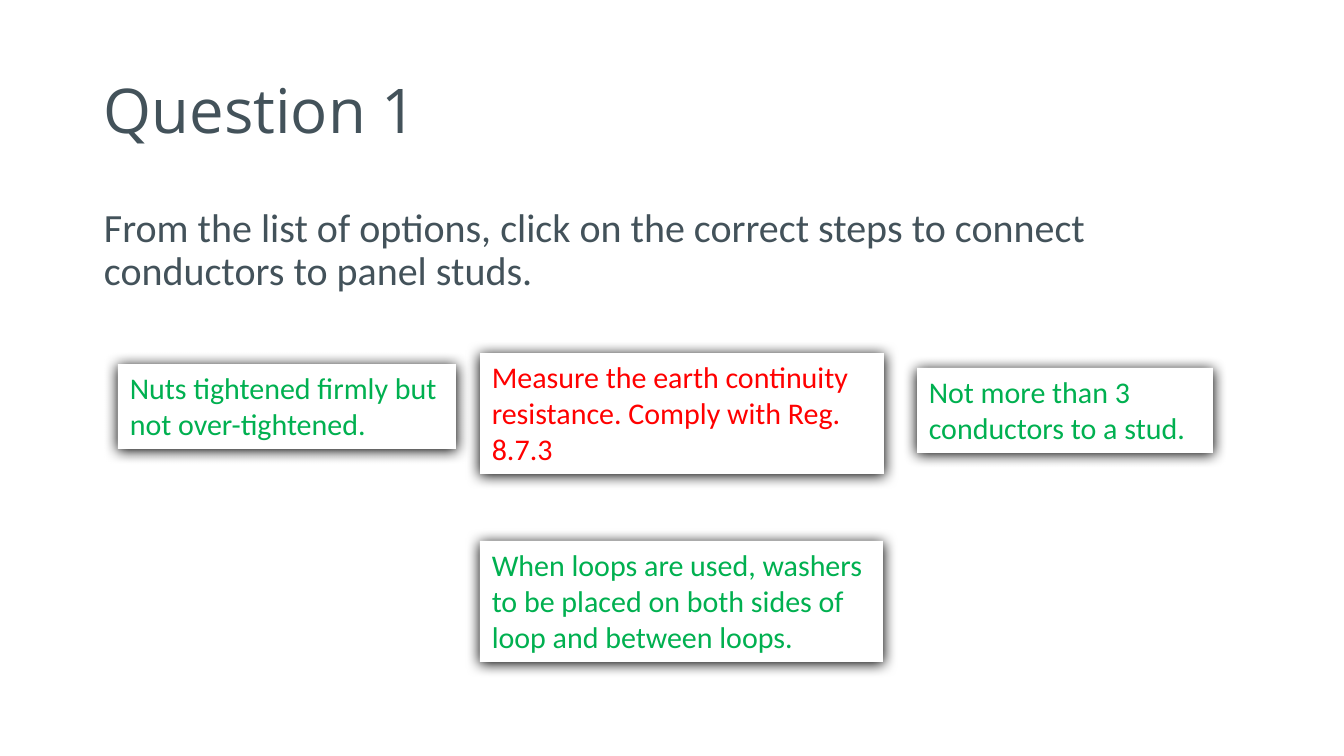
from lxml.etree import SubElement
from pptx import Presentation
from pptx.dml.color import RGBColor
from pptx.enum.shapes import MSO_SHAPE as SHAPE
from pptx.enum.text import MSO_ANCHOR as ANCHOR, MSO_AUTO_SIZE as FIT, PP_ALIGN as ALIGN
from pptx.oxml.ns import qn
from pptx.util import Pt

PX = 914400 // 120
SIZE = (1344, 756)
HEX = {"slate": "43525A", "right": "00B050", "wrong": "FF0000",
       "card": "FFFFFF", "shade": "000000"}
TITLE = "Question 1"
TASK = ("From the list of options, click on the correct steps "
        "to connect conductors to panel studs.")
# text, colour, left, top, width, height
CARDS = [
    ("Not more than 3 conductors to a stud.", "right", 917, 368, 296, 85),
    ("Nuts tightened firmly but not over-tightened.", "right", 118, 364, 338, 85),
    ("When loops are used, washers to be placed on both sides of loop "
     "and between loops.", "right", 480, 541, 403, 121),
    ("Measure the earth continuity resistance. Comply with Reg. 8.7.3",
     "wrong", 480, 353, 404, 121),
]
FONTS = {
    "title": {"name": "Open Sans", "size": Pt(37)},
    "task": {"name": "Calibri", "size": Pt(24)},
    "card": {"name": "Calibri", "size": Pt(18)},
}


def rgb(key):
    return RGBColor.from_string(HEX[key])


def write(shape, text, style, color, anchor, line=1.0):
    frame = shape.text_frame
    frame.text = text
    para = frame.paragraphs[0]
    if style == "task":
        props = para._p.get_or_add_pPr()
        props.set("marL", "0")
        props.set("indent", "0")
        SubElement(props, qn("a:buNone"))
    look = {"word_wrap": True, "auto_size": FIT.NONE, "vertical_anchor": anchor}
    flow = {"alignment": ALIGN.LEFT, "line_spacing": line, "space_before": Pt(0)}
    for part, values in ((frame, look), (para, flow), (para.runs[0].font, FONTS[style])):
        for name, value in values.items():
            setattr(part, name, value)
    para.runs[0].font.color.rgb = rgb(color)


def place(shape, left, top, width, height):
    for name, value in zip(("left", "top", "width", "height"), (left, top, width, height)):
        setattr(shape, name, value * PX)


def shade(shape):
    """Give the shape a soft shadow just below it."""
    shape.shadow.inherit = False
    effects = shape._element.spPr.find(qn("a:effectLst"))
    outer = SubElement(effects, qn("a:outerShdw"), blurRad=str(Pt(8.5)),
                       dist=str(Pt(1)), dir="5400000", algn="t", rotWithShape="0")
    SubElement(outer, qn("a:srgbClr"), val=HEX["shade"])


deck = Presentation()
deck.slide_width, deck.slide_height = (side * PX for side in SIZE)
slide = deck.slides.add_slide(deck.slide_layouts[1])

title, task = slide.placeholders
place(title, 92, 41, 1159, 146)
write(title, TITLE, "title", "slate", ANCHOR.MIDDLE, 0.9)
place(task, 92, 202, 1159, 480)
write(task, TASK, "task", "slate", ANCHOR.TOP, 0.9)

for text, color, *box in CARDS:
    card = slide.shapes.add_shape(SHAPE.RECTANGLE, *(n * PX for n in box))
    card.fill.solid()
    card.fill.fore_color.rgb = rgb("card")
    card.line.fill.background()
    shade(card)
    write(card, text, "card", color, ANCHOR.TOP)

deck.save("out.pptx")
